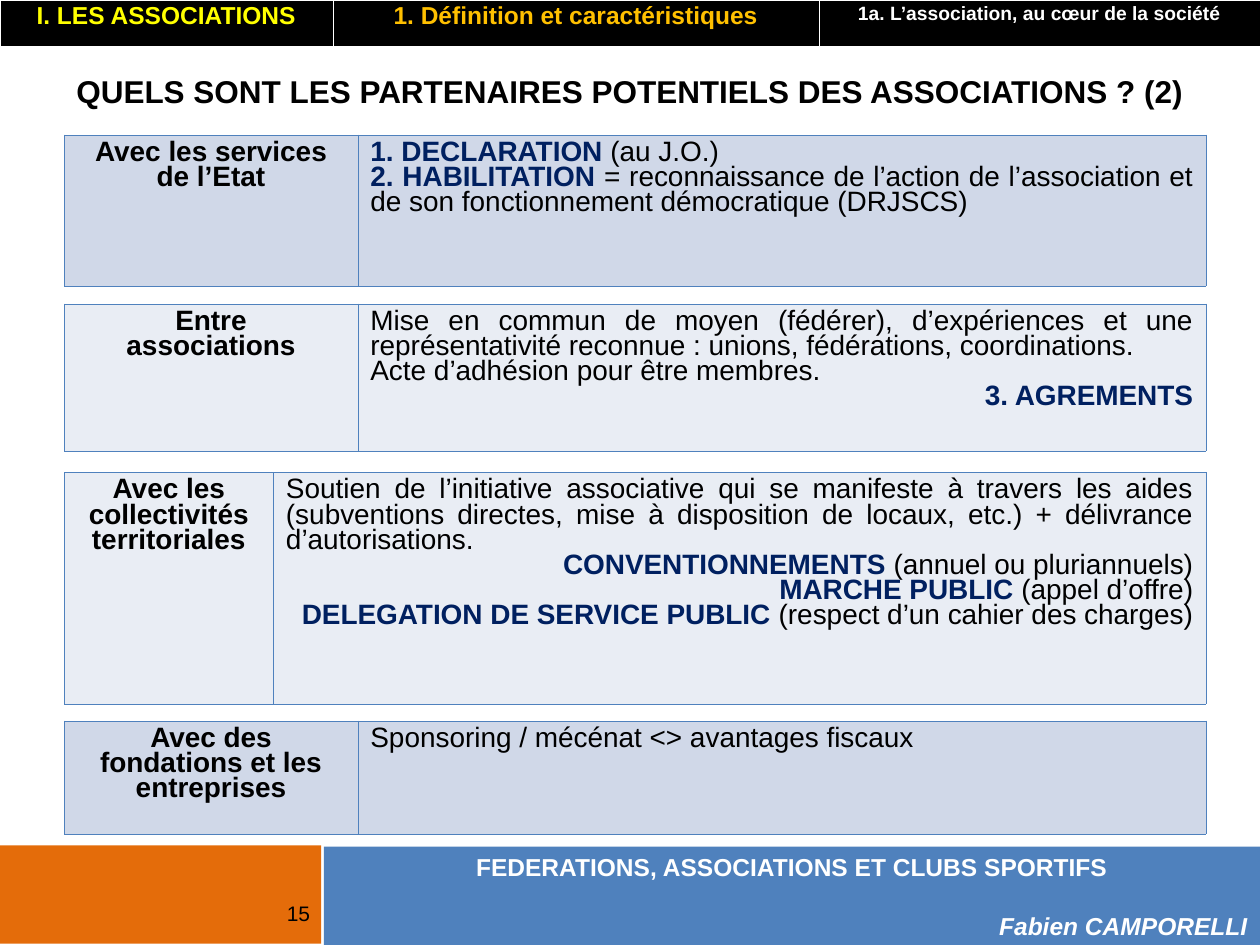
from lxml.etree import SubElement
from pptx import Presentation
from pptx.dml.color import RGBColor
from pptx.enum.shapes import MSO_SHAPE
from pptx.enum.text import MSO_ANCHOR, MSO_AUTO_SIZE, PP_ALIGN
from pptx.oxml.ns import qn
from pptx.util import Inches, Pt

BLACK = RGBColor(0x00, 0x00, 0x00)
WHITE = RGBColor(0xFF, 0xFF, 0xFF)
YELLOW = RGBColor(0xFF, 0xFF, 0x00)
GOLD = RGBColor(0xFF, 0xC0, 0x00)
ORANGE = RGBColor(0xE4, 0x6C, 0x0A)
BLUE = RGBColor(0x4F, 0x81, 0xBD)
NAVY = RGBColor(0x00, 0x20, 0x60)
MID_BLUE = RGBColor(0xD0, 0xD8, 0xE8)
PALE_BLUE = RGBColor(0xE9, 0xED, 0xF4)

CENTER, RIGHT, JUSTIFY = PP_ALIGN.CENTER, PP_ALIGN.RIGHT, PP_ALIGN.JUSTIFY
TABLE_LEFT, TABLE_WIDTH = 0.51, 9.06

PLAIN = {"size": Pt(16), "bold": False, "color": BLACK}
STRONG = {**PLAIN, "bold": True}
KEYWORD = {**STRONG, "color": NAVY}
FOOTER = {"size": Pt(14), "bold": True, "color": WHITE}


class SlideBuilder:
    font_name = "Arial"
    line_spacing = 0.81

    def __init__(self, slide):
        self.slide = slide

    def fill_text(self, frame, paragraphs, **paragraph_format):
        """Fill a text frame from (alignment, [(text, font format), ...]) pairs."""
        frame.word_wrap = True
        for index, (alignment, runs) in enumerate(paragraphs):
            paragraph = frame.add_paragraph() if index else frame.paragraphs[0]
            paragraph.alignment = alignment
            for name, value in paragraph_format.items():
                setattr(paragraph, name, value)
            for text, font_format in runs:
                run = paragraph.add_run()
                run.text = text
                run.font.name = self.font_name
                for name, value in font_format.items():
                    if name == "color":
                        run.font.color.rgb = value
                    else:
                        setattr(run.font, name, value)

    def title(self, text, left, top, width, height):
        title = self.slide.shapes.title
        title.left, title.top = Inches(left), Inches(top)
        title.width, title.height = Inches(width), Inches(height)
        frame = title.text_frame
        frame.auto_size = MSO_AUTO_SIZE.NONE
        frame.vertical_anchor = MSO_ANCHOR.TOP
        self.fill_text(frame, [(CENTER, [(text, {**STRONG, "size": Pt(18)})])])

    def rectangle(self, left, top, width, height, color):
        shape = self.slide.shapes.add_shape(
            MSO_SHAPE.RECTANGLE, Inches(left), Inches(top), Inches(width), Inches(height))
        shape.shadow.inherit = False
        shape.fill.solid()
        shape.fill.fore_color.rgb = color
        shape.line.fill.background()
        return shape

    def text_box(self, left, top, width, height, paragraphs):
        box = self.slide.shapes.add_textbox(
            Inches(left), Inches(top), Inches(width), Inches(height))
        self.fill_text(box.text_frame, paragraphs)

    def border(self, cell, color):
        properties = cell._tc.get_or_add_tcPr()
        for index, side in enumerate(("lnL", "lnR", "lnT", "lnB")):
            line = SubElement(properties, qn(f"a:{side}"), w=str(Pt(0.06)))
            fill = SubElement(line, qn("a:solidFill"))
            SubElement(fill, qn("a:srgbClr"), val=str(color))
            properties.insert(index, line)

    def row_table(self, left, top, height, widths, cells, fill, border):
        """Add a one-row table; each cell is a list of paragraphs."""
        table = self.slide.shapes.add_table(
            1, len(widths), Inches(left), Inches(top),
            Inches(sum(widths)), Inches(height)).table
        table.first_row = table.horz_banding = False
        for index, (width, paragraphs) in enumerate(zip(widths, cells)):
            table.columns[index].width = Inches(width)
            cell = table.cell(0, index)
            cell.fill.solid()
            cell.fill.fore_color.rgb = fill
            self.border(cell, border)
            self.fill_text(cell.text_frame, paragraphs, line_spacing=self.line_spacing)


# Top, height, label width, fill, label lines, description paragraphs
PARTNERS = [
    (1.07, 1.2, 2.33, MID_BLUE, ["Avec les services de l’Etat"], [
        (JUSTIFY, [("1. DECLARATION", KEYWORD), (" (au J.O.)", PLAIN)]),
        (JUSTIFY, [("2. HABILITATION", KEYWORD),
                   (" = reconnaissance de l’action de l’association et de son "
                    "fonctionnement démocratique (DRJSCS)", PLAIN)]),
    ]),
    (2.41, 1.17, 2.33, PALE_BLUE, ["Entre", "associations"], [
        (JUSTIFY, [("Mise en commun de moyen (fédérer), d’expériences et une "
                    "représentativité reconnue : unions, fédérations, coordinations.", PLAIN)]),
        (JUSTIFY, [("Acte d’adhésion pour être membres.", PLAIN)]),
        (RIGHT, [("3. AGREMENTS", KEYWORD)]),
    ]),
    (3.75, 1.84, 1.66, PALE_BLUE, ["Avec les collectivités territoriales"], [
        (JUSTIFY, [("Soutien de l’initiative associative qui se manifeste à travers les "
                    "aides (subventions directes, mise à disposition de locaux, etc.) + "
                    "délivrance d’autorisations.", PLAIN)]),
        (RIGHT, [("CONVENTIONNEMENTS ", KEYWORD), ("(annuel ou pluriannuels)", PLAIN)]),
        (RIGHT, [("MARCHE PUBLIC ", KEYWORD), ("(appel d’offre)", PLAIN)]),
        (RIGHT, [("DELEGATION DE SERVICE PUBLIC ", KEYWORD),
                 ("(respect d’un cahier des charges)", PLAIN)]),
    ]),
    (5.72, 0.9, 2.33, MID_BLUE, ["Avec des fondations et les entreprises"], [
        (JUSTIFY, [("Sponsoring / mécénat <> avantages fiscaux", PLAIN)]),
    ]),
]

BREADCRUMB = [
    ("I. LES ASSOCIATIONS", 14, YELLOW),
    ("1. Définition et caractéristiques", 14, GOLD),
    ("1a. L’association, au cœur de la société", 11, WHITE),
]


def main():
    presentation = Presentation()
    presentation.slide_width, presentation.slide_height = Inches(10), Inches(7.5)
    builder = SlideBuilder(presentation.slides.add_slide(presentation.slide_layouts[5]))

    builder.rectangle(-0.01, 6.71, 2.56, 0.78, ORANGE)
    footer = builder.rectangle(2.57, 6.72, 7.43, 0.78, BLUE).text_frame
    footer.vertical_anchor = MSO_ANCHOR.MIDDLE
    builder.fill_text(footer, [
        (CENTER, [("FEDERATIONS, ASSOCIATIONS ET CLUBS SPORTIFS", FOOTER)]),
        (RIGHT, [("Fabien CAMPORELLI", {**FOOTER, "italic": True})]),
    ])
    footer.paragraphs[1].space_before = Pt(17)
    builder.text_box(2.01, 7.1, 0.55, 0.4, [(RIGHT, [("15", {**PLAIN, "size": Pt(12)})])])

    builder.title("QUELS SONT LES PARTENAIRES POTENTIELS DES ASSOCIATIONS ? (2)",
                  0, 0.52, 10, 0.4)
    breadcrumb_cells = [
        [(CENTER, [(text, {"size": Pt(size), "bold": True, "color": color})])]
        for text, size, color in BREADCRUMB]
    builder.row_table(0, 0, 0.37, [2.64, 3.86, 3.5], breadcrumb_cells, BLACK, WHITE)

    for top, height, label_width, fill, label_lines, description in PARTNERS:
        label = [(CENTER, [(line, STRONG)]) for line in label_lines]
        builder.row_table(TABLE_LEFT, top, height, [label_width, TABLE_WIDTH - label_width],
                          [label, description], fill, BLUE)

    presentation.save("out.pptx")


if __name__ == "__main__":
    main()
